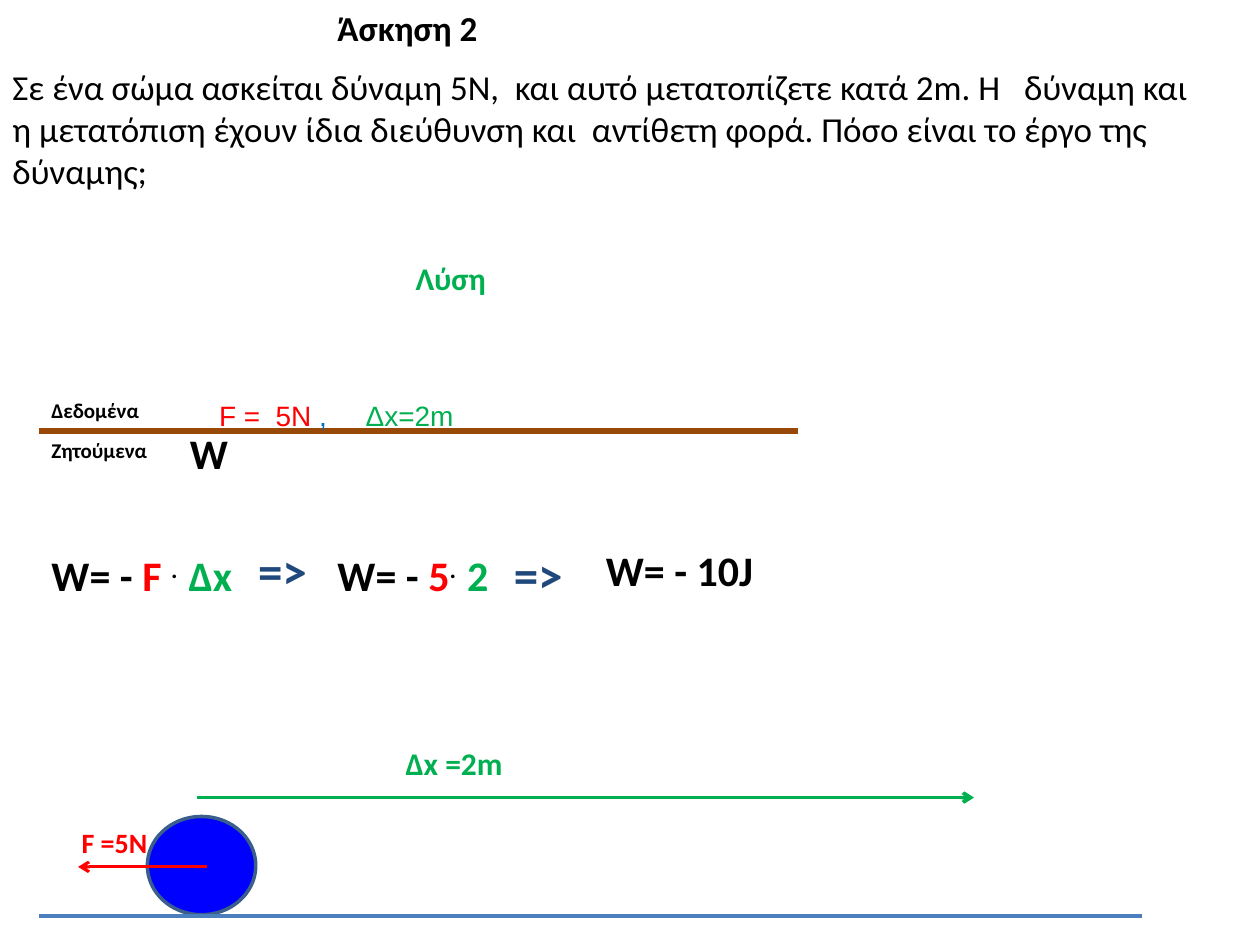
from lxml import etree
from pptx import Presentation
from pptx import util as u
from pptx.dml.color import RGBColor
from pptx.enum import shapes, text
from pptx.oxml import ns

BLACK, RED, GREEN, NAVY = "000000", "FF0000", "00B050", "1F497D"
LEFT = 0.31
GROUND = 7.27
DIVIDER = 3.42
FORMULA = 4.31

PROBLEM = (
    "Σε ένα σώμα ασκείται δύναμη 5Ν,  και αυτό μετατοπίζετε κατά 2m. "
    "Η   δύναμη και η μετατόπιση έχουν ίδια διεύθυνση και  αντίθετη φορά. "
    "Πόσο είναι το έργο της δύναμης;"
)
DOT = ".  "


def product(force, distance):
    return [("W= - ", BLACK), (force, RED), (DOT, BLACK), (distance, GREEN)]


BALL = (1.17, 6.48, 0.86, 0.78)

# start x, end x, y, colour, width, arrow
LINES = [
    (1.64, 0.62, 6.88, RED, 1.75, True),
    (1.56, 7.73, 6.33, GREEN, 2, True),
    (LEFT, 9.06, GROUND, "4B7EBC", 2.25, False),
    (LEFT, 6.33, DIVIDER, "984807", 3, False),
]

# box, size, bold, font, wrap, runs
TEXTS = [
    ((0, 0.47, 9.69, 1.11), 20, False, "Calibri", True, [(PROBLEM, BLACK)]),
    ((2.58, 0, 3.52, 0.44), 20, True, "Calibri", True, [("Άσκηση 2", BLACK)]),
    ((0.55, 6.5, 1.33, 0.37), 16, True, "Calibri", True, [("F =5N", RED)]),
    ((3.12, 5.86, 1.25, 0.4), 18, True, "Calibri", True, [("Δx =2m", GREEN)]),
    ((3.2, 2.01, 1.64, 0.4), 18, True, "Calibri", True, [("Λύση", GREEN)]),
    ((LEFT, 3.11, 0.94, 0.3), 12, True, "Calibri", False, [("Δεδομένα", BLACK)]),
    ((LEFT, DIVIDER, 1.01, 0.3), 12, True, "Calibri", False, [("Ζητούμενα", BLACK)]),
    ((1.64, 3.11, 2.42, 0.55), 16, False, "Arial", True,
     [("F =  5N ", RED), (",     ", "0070C0"), ("Δx=2m", GREEN)]),
    ((1.41, 3.34, 0.7, 0.5), 24, True, "Calibri", True, [("W", BLACK)]),
    ((LEFT, FORMULA, 1.72, 0.5), 24, True, "Calibri", True, product("F ", "Δx")),
    ((1.95, 4.24, 0.63, 0.57), 28, True, "Calibri", True, [("=>", NAVY)]),
    ((2.58, FORMULA, 1.72, 0.5), 24, True, "Calibri", True, product("5", "2")),
    ((3.98, 4.27, 0.63, 0.57), 28, True, "Calibri", True, [("=>", NAVY)]),
    ((4.71, 4.27, 1.38, 0.5), 24, True, "Calibri", False, [("W= - 10J", BLACK)]),
]


def colour(value):
    return RGBColor.from_string(value)


def inches(values):
    return [u.Inches(value) for value in values]


def add_ball(slide):
    ball = slide.shapes.add_shape(shapes.MSO_SHAPE.OVAL, *inches(BALL))
    ball.shadow.inherit = False
    ball.fill.solid()
    ball.fill.fore_color.rgb = colour("0000FF")
    ball.line.color.rgb = colour("3A5F8C")
    ball.line.width = u.Pt(2)


def add_line(slide, start, end, y, line_colour, width, arrow):
    connector = slide.shapes.add_connector(
        shapes.MSO_CONNECTOR.STRAIGHT, *inches((start, y, end, y)))
    connector.line.color.rgb = colour(line_colour)
    connector.line.width = u.Pt(width)
    if arrow:
        outline = connector.line._get_or_add_ln()
        etree.SubElement(outline, ns.qn("a:tailEnd"), type="arrow")
    etree.SubElement(connector._element.spPr, ns.qn("a:effectLst"))


def add_text(slide, box, size, bold, font, wrap, runs):
    frame = slide.shapes.add_textbox(*inches(box)).text_frame
    frame.word_wrap = wrap
    frame.auto_size = text.MSO_AUTO_SIZE.SHAPE_TO_FIT_TEXT
    paragraph = frame.paragraphs[0]
    for words, run_colour in runs:
        run = paragraph.add_run()
        run.text = words
        run.font.name = font
        run.font.size = u.Pt(size)
        run.font.bold = bold
        run.font.color.rgb = colour(run_colour)
        if words == DOT:
            run._r.get_or_add_rPr().set("baseline", "30000")


def main():
    presentation = Presentation()
    presentation.slide_width = u.Inches(10)
    presentation.slide_height = u.Inches(7.5)
    slide = presentation.slides.add_slide(presentation.slide_layouts[6])
    add_ball(slide)
    for line in LINES:
        add_line(slide, *line)
    for item in TEXTS:
        add_text(slide, *item)
    presentation.save("out.pptx")


if __name__ == "__main__":
    main()
